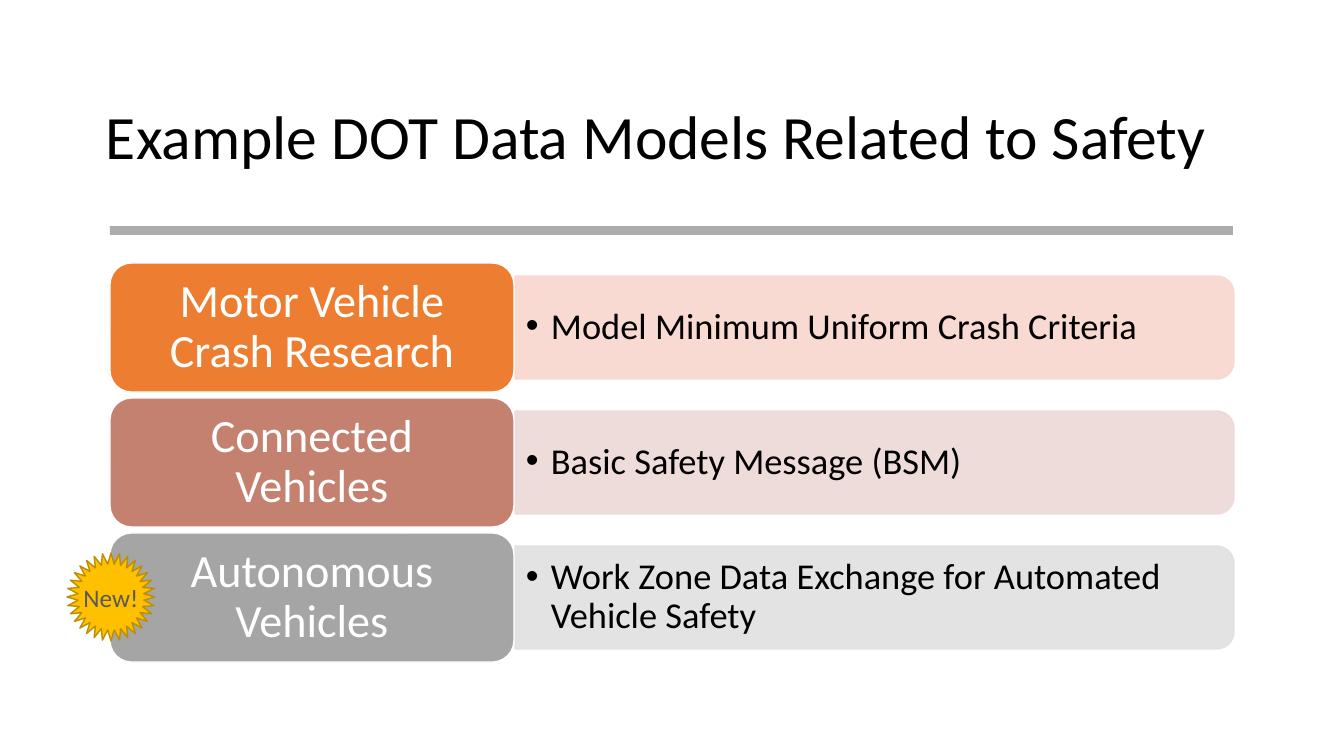
from dataclasses import dataclass

from lxml.etree import SubElement
from pptx import Presentation
from pptx.dml.color import RGBColor
from pptx.enum.shapes import MSO_SHAPE
from pptx.enum.text import MSO_ANCHOR, PP_ALIGN
from pptx.oxml.ns import qn
from pptx.util import Pt

SCALE = 914400 / 100.8


def px(n):
    return round(n * SCALE)


@dataclass(frozen=True)
class Theme:
    font: str = "Calibri"
    black: str = "000000"
    white: str = "FFFFFF"
    rule: str = "808080"
    gold: str = "FFC000"
    edge: str = "BD8E00"
    gray: str = "595959"
    darks: tuple = ("ED7D31", "C48170", "A5A5A5")
    lights: tuple = ("F8D7CE", "EDD9D7", "E1E1E1")
    head: int = 44
    label: int = 33
    body: int = 26
    badge: int = 18


class Deck:
    def __init__(self, theme):
        self.theme = theme
        self.show = Presentation()
        self.show.slide_width, self.show.slide_height = px(1344), px(756)
        self.slide = self.show.slides.add_slide(self.show.slide_layouts[6])

    def shape(self, kind, box, fill, line=None, alpha=100):
        item = self.slide.shapes.add_shape(kind, *map(px, box))
        item.shadow.inherit = False
        item.fill.solid()
        item.fill.fore_color.rgb = RGBColor.from_string(fill)
        if line:
            item.line.color.rgb = RGBColor.from_string(line)
            item.line.width = Pt(1)
        else:
            item.line.fill.background()
        if alpha < 100:
            for color in item.element.spPr.iter(qn("a:srgbClr")):
                SubElement(color, qn("a:alpha"), val=str(alpha * 1000))
        return item

    def fill_text(self, item, text, size, color, pad=(10, 5),
                  align=PP_ALIGN.LEFT, wrap=True, space=0.9):
        frame = item.text_frame
        para = frame.paragraphs[0]
        run = para.add_run()
        run.text = text
        run.font.color.rgb = RGBColor.from_string(color)
        side, edge = map(px, pad)
        formats = [
            (frame, {"word_wrap": wrap, "vertical_anchor": MSO_ANCHOR.MIDDLE,
                     "margin_left": side, "margin_right": side,
                     "margin_top": edge, "margin_bottom": edge}),
            (para, {"alignment": align, "line_spacing": space}),
            (run.font, {"name": self.theme.font, "size": Pt(size)}),
        ]
        for target, values in formats:
            for name, value in values.items():
                setattr(target, name, value)
        return para

    def text(self, box, text, size, pad=(10, 5)):
        item = self.slide.shapes.add_textbox(*map(px, box))
        return self.fill_text(item, text, size, self.theme.black, pad)

    def bullet(self, box, text):
        para = self.text(box, text, self.theme.body, (11, 5))
        props = para._p.get_or_add_pPr()
        for name, value in {"marL": px(25), "indent": px(-25)}.items():
            props.set(name, str(value))
        SubElement(props, qn("a:buFont"), typeface="Arial")
        SubElement(props, qn("a:buChar"), char="•")

    def band(self, box, fill):
        left, top, width, height = box
        shift = (width - height) // 2
        turned = (left + shift, top - shift, height, width)
        item = self.shape(MSO_SHAPE.ROUND_2_SAME_RECTANGLE, turned, fill, fill, 90)
        item.rotation = 90

    def label(self, box, text, fill):
        item = self.shape(MSO_SHAPE.ROUNDED_RECTANGLE, box, fill, self.theme.white)
        self.fill_text(item, text, self.theme.label, self.theme.white, (14, 7),
                       PP_ALIGN.CENTER)

    def badge(self, box, text):
        item = self.shape(MSO_SHAPE.STAR_32_POINT, box, self.theme.gold, self.theme.edge)
        self.fill_text(item, text, self.theme.badge, self.theme.gray, (0, 0),
                       PP_ALIGN.CENTER, False, 1.0)


ROWS = [
    ("Motor Vehicle Crash Research", "Model Minimum Uniform Crash Criteria"),
    ("Connected Vehicles", "Basic Safety Message (BSM)"),
    ("Autonomous Vehicles", "Work Zone Data Exchange for Automated Vehicle Safety"),
]


def main():
    theme = Theme()
    deck = Deck(theme)
    deck.text((96, 67, 1152, 146), "Example DOT Data Models Related to Safety", theme.head)
    deck.shape(MSO_SHAPE.RECTANGLE, (110, 226, 1123, 9), theme.rule, alpha=65)
    for index, (topic, model) in enumerate(ROWS):
        top = 263 + 135 * index
        deck.band((515, top + 13, 719, 103), theme.lights[index])
        deck.bullet((515, top + 18, 714, 93), model)
        deck.label((110, top, 404, 129), topic, theme.darks[index])
    deck.badge((67, 553, 88, 88), "New!")
    deck.show.save("out.pptx")


if __name__ == "__main__":
    main()
